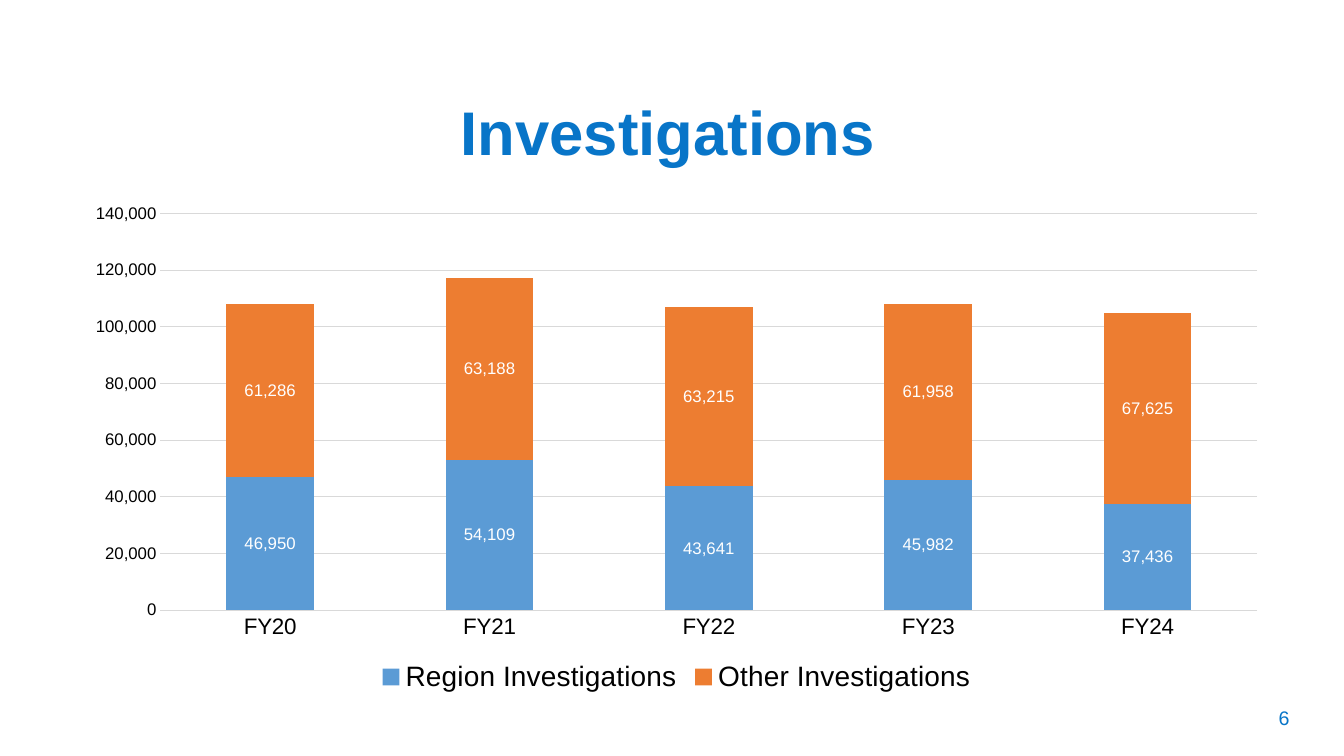
import pptx
import pptx.chart.data
import pptx.dml.color
import pptx.enum.chart
import pptx.enum.text
import pptx.util
from pptx.util import Inches

BLUE_TEXT = pptx.dml.color.RGBColor(0x08, 0x75, 0xC8)
REGION_BLUE = pptx.dml.color.RGBColor(0x5B, 0x9B, 0xD5)
OTHER_ORANGE = pptx.dml.color.RGBColor(0xED, 0x7D, 0x31)
GRID_GREY = pptx.dml.color.RGBColor(0xD9, 0xD9, 0xD9)
BLACK = pptx.dml.color.RGBColor(0, 0, 0)
WHITE = pptx.dml.color.RGBColor(0xFF, 0xFF, 0xFF)

FISCAL_YEARS = ["FY20", "FY21", "FY22", "FY23", "FY24"]
INVESTIGATIONS = [
    ("Region Investigations", [46950, 53108, 43641, 45982, 37436], REGION_BLUE, "54,109"),
    ("Other Investigations", [61286, 64237, 63215, 61958, 67625], OTHER_ORANGE, "63,188"),
]
RELABELLED_YEAR = FISCAL_YEARS.index("FY21")
NUMBER_FORMAT = "#,##0"


def style_font(font, size, color, bold=False):
    """Apply the slide's typeface with a size, colour and weight."""
    font.name = "Arial"
    font.size = pptx.util.Pt(size)
    font.color.rgb = color
    font.bold = bold


def style_line(line):
    """Draw a thin grey rule."""
    line.color.rgb = GRID_GREY
    line.width = pptx.util.Pt(0.75)


def add_centred_text(slide, box, text, size, bold=False, line_spacing=1.0):
    """Place one centred blue line of text at the top of the box."""
    text_frame = slide.shapes.add_textbox(*box).text_frame
    text_frame.word_wrap = True
    text_frame.vertical_anchor = pptx.enum.text.MSO_ANCHOR.TOP
    text_frame.text = text
    paragraph = text_frame.paragraphs[0]
    paragraph.alignment = pptx.enum.text.PP_ALIGN.CENTER
    paragraph.line_spacing = line_spacing
    style_font(paragraph.runs[0].font, size, BLUE_TEXT, bold)


def style_axes(chart):
    """Format the year axis, the count axis and its gridlines."""
    no_tick = pptx.enum.chart.XL_TICK_MARK.NONE
    for axis, size in ((chart.category_axis, 16), (chart.value_axis, 12)):
        axis.major_tick_mark = no_tick
        axis.minor_tick_mark = no_tick
        style_font(axis.tick_labels.font, size, BLACK)
    style_line(chart.category_axis.format.line)
    count_axis = chart.value_axis
    count_axis.minimum_scale = 0
    count_axis.maximum_scale = 140000
    count_axis.major_unit = 20000
    count_axis.format.line.fill.background()
    count_axis.has_major_gridlines = True
    style_line(count_axis.major_gridlines.format.line)
    count_axis.tick_labels.number_format = NUMBER_FORMAT
    count_axis.tick_labels.number_format_is_linked = False


def style_series(series, color, relabelled_text):
    """Colour a series and label its values, one of them with set text."""
    center = pptx.enum.chart.XL_LABEL_POSITION.CENTER
    series.format.fill.solid()
    series.format.fill.fore_color.rgb = color
    series.invert_if_negative = False
    labels = series.data_labels
    labels.show_value = True
    labels.position = center
    labels.number_format = NUMBER_FORMAT
    labels.number_format_is_linked = False
    style_font(labels.font, 12, WHITE)
    label = series.points[RELABELLED_YEAR].data_label
    label.text_frame.text = relabelled_text
    style_font(label.text_frame.paragraphs[0].runs[0].font, 12, WHITE)
    label.position = center


def add_investigations_chart(slide, box):
    """Fill the box with the stacked column chart of investigations."""
    data = pptx.chart.data.CategoryChartData(number_format=NUMBER_FORMAT)
    data.categories = FISCAL_YEARS
    for name, values, _, _ in INVESTIGATIONS:
        data.add_series(name, values)
    chart_type = pptx.enum.chart.XL_CHART_TYPE.COLUMN_STACKED
    chart = slide.shapes.add_chart(chart_type, *box, data).chart
    style_font(chart.font, 10, WHITE)
    chart.has_title = False
    chart.has_legend = True
    chart.legend.position = pptx.enum.chart.XL_LEGEND_POSITION.BOTTOM
    chart.legend.include_in_layout = False
    style_font(chart.legend.font, 20, BLACK)
    style_axes(chart)
    plot = chart.plots[0]
    plot.gap_width = 150
    plot.overlap = 100
    plot.vary_by_categories = False
    for series, (_, _, color, relabelled_text) in zip(plot.series, INVESTIGATIONS):
        style_series(series, color, relabelled_text)


def main():
    """Build and save the investigations slide."""
    presentation = pptx.Presentation()
    presentation.slide_width = Inches(13.33)
    presentation.slide_height = Inches(7.5)
    slide = presentation.slides.add_slide(presentation.slide_layouts[6])
    number_box = (Inches(12.29), Inches(6.95), Inches(0.89), Inches(0.4))
    title_box = (Inches(1.47), Inches(0.97), Inches(10.31), Inches(1.45))
    chart_box = (Inches(0.71), Inches(1.93), Inches(12), Inches(5))
    add_centred_text(slide, number_box, "6", 14)
    add_centred_text(slide, title_box, "Investigations", 44, bold=True, line_spacing=0.9)
    add_investigations_chart(slide, chart_box)
    presentation.save("out.pptx")


if __name__ == "__main__":
    main()
